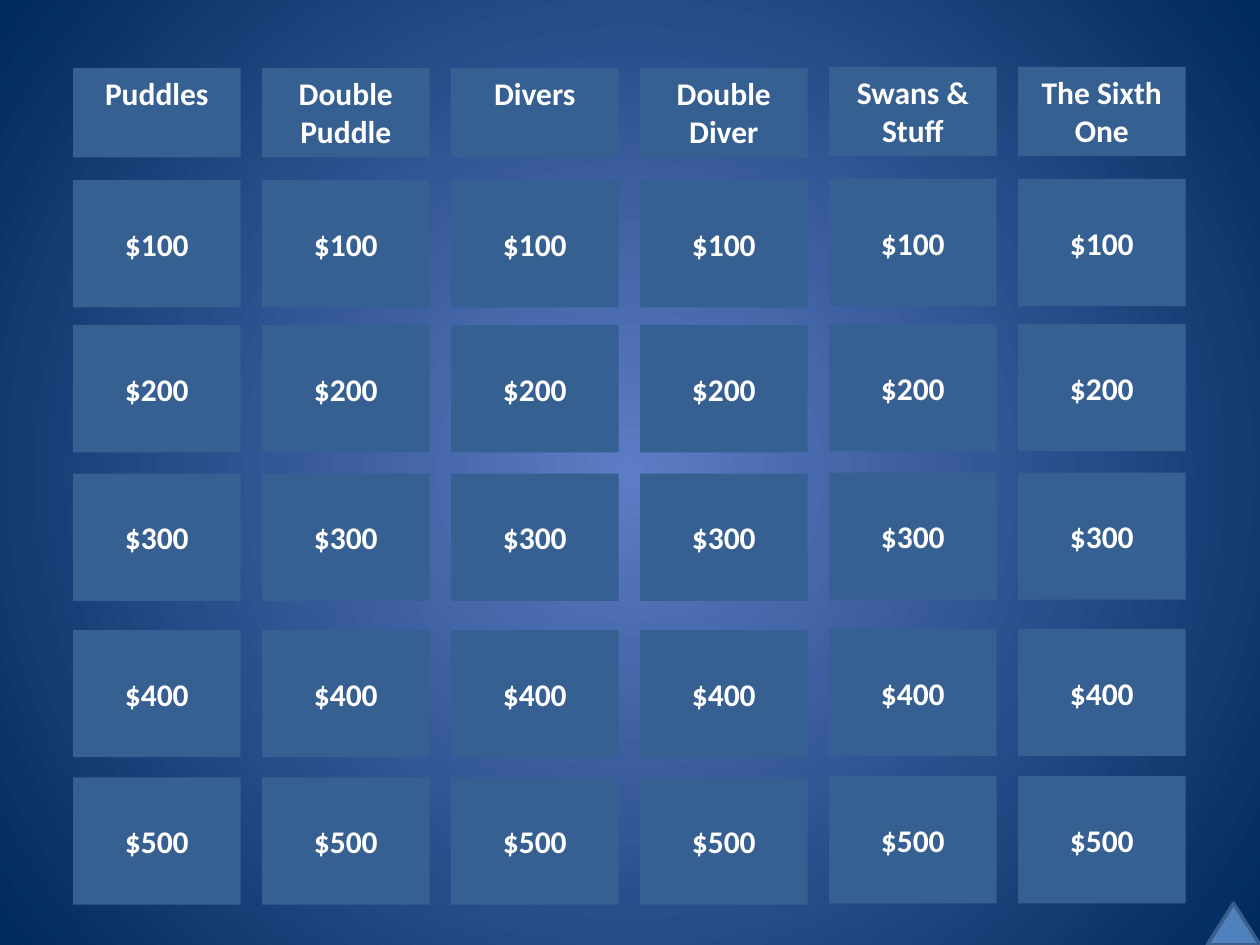
from lxml.etree import SubElement
from pptx import Presentation
from pptx.dml.color import RGBColor
from pptx.enum.shapes import MSO_SHAPE
from pptx.enum.text import MSO_ANCHOR, MSO_AUTO_SIZE, PP_ALIGN
from pptx.oxml.ns import qn
from pptx.util import Inches, Pt

CATEGORIES = ["Puddles", "Double Puddle", "Divers", "Double Diver", "Swans & Stuff", "The Sixth One"]
PRIZE_TOPS = {"$100": 1.43, "$200": 2.58, "$300": 3.76, "$400": 5, "$500": 6.17}
HEADER_TOP, HEADER_HEIGHT = 0.54, 0.71
PRIZE_HEIGHT = 1.01
LEFT, COLUMN_STEP, TILE_WIDTH = 0.58, 1.5, 1.33
RAISED_COLUMNS, RAISE = (4, 5), 0.01


def color(value):
    return RGBColor.from_string(value)


def set_radial_background(page, center, edge):
    fill = page.background.fill
    fill.gradient()
    for stop, position, value in zip(fill.gradient_stops, (0, 1), (center, edge)):
        stop.position = position
        stop.color.rgb = color(value)
    gradient = page.element.find(".//" + qn("a:gradFill"))
    gradient.remove(gradient.find(qn("a:lin")))
    circle = SubElement(gradient, qn("a:path"))
    circle.set("path", "circle")
    focus = SubElement(circle, qn("a:fillToRect"))
    for side in "ltrb":
        focus.set(side, "50000")


def add_filled_shape(page, kind, left, top, width, height, fill):
    shape = page.shapes.add_shape(kind, Inches(left), Inches(top), Inches(width), Inches(height))
    shape.shadow.inherit = False
    shape.fill.solid()
    shape.fill.fore_color.rgb = color(fill)
    return shape


def add_tile(page, column, top, height, text, anchor):
    if column in RAISED_COLUMNS:
        top -= RAISE
    left = LEFT + column * COLUMN_STEP
    box = add_filled_shape(page, MSO_SHAPE.RECTANGLE, left, top, TILE_WIDTH, height, "376092")
    box.line.fill.background()
    frame = box.text_frame
    frame.word_wrap = True
    frame.auto_size = MSO_AUTO_SIZE.NONE
    frame.vertical_anchor = anchor
    para = frame.paragraphs[0]
    para.alignment = PP_ALIGN.CENTER
    span = para.add_run()
    span.text = text
    span.font.name = "Calibri"
    span.font.size = Pt(18)
    span.font.bold = True
    span.font.color.rgb = color("FFFFFF")


def add_corner_triangle(page):
    triangle = add_filled_shape(page, MSO_SHAPE.ISOSCELES_TRIANGLE, 9.58, 7.17, 0.42, 0.33, "4F81BD")
    triangle.line.color.rgb = color("3A5F8C")
    triangle.line.width = Pt(2)


def main():
    deck = Presentation()
    deck.slide_width = Inches(10)
    deck.slide_height = Inches(7.5)
    page = deck.slides.add_slide(deck.slide_layouts[6])
    set_radial_background(page, "5E7CC5", "00295C")
    for prize, top in PRIZE_TOPS.items():
        for column in range(len(CATEGORIES)):
            add_tile(page, column, top, PRIZE_HEIGHT, prize, MSO_ANCHOR.MIDDLE)
    for column, category in enumerate(CATEGORIES):
        add_tile(page, column, HEADER_TOP, HEADER_HEIGHT, category, MSO_ANCHOR.TOP)
    add_corner_triangle(page)
    deck.save("out.pptx")


if __name__ == "__main__":
    main()
